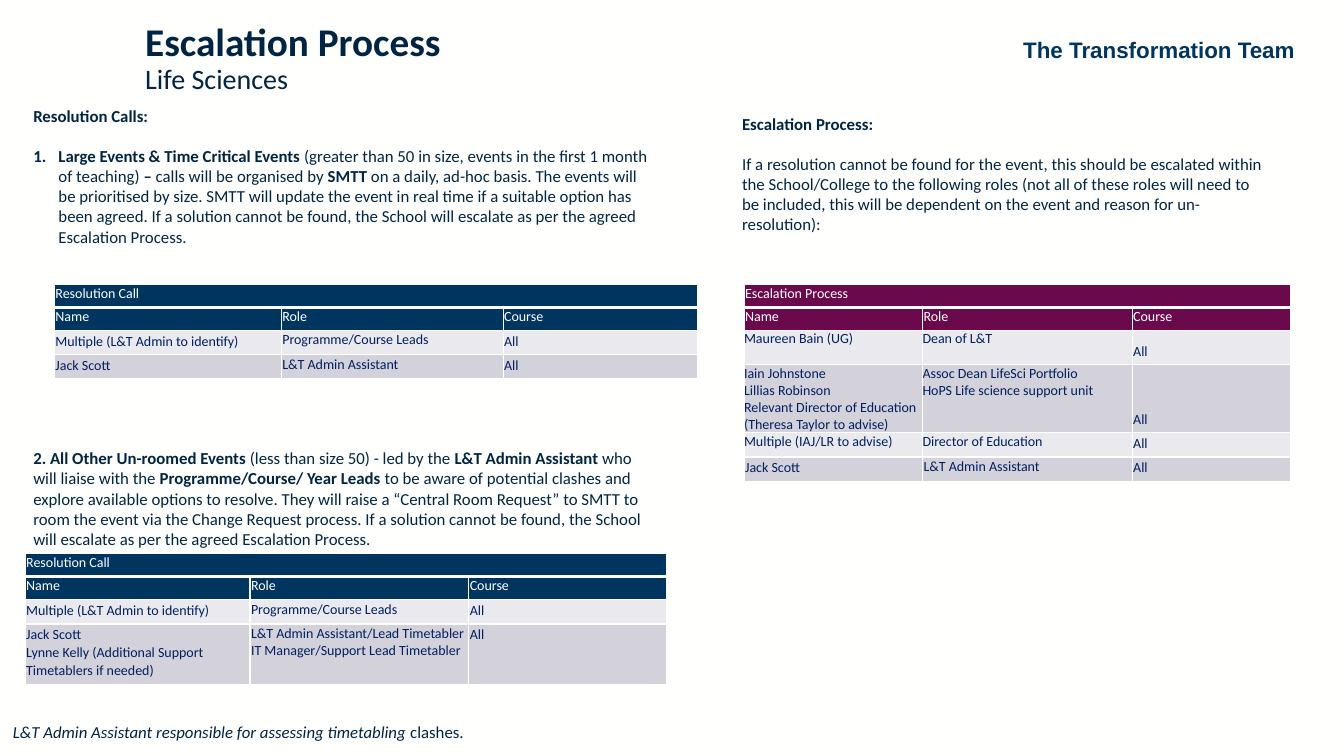
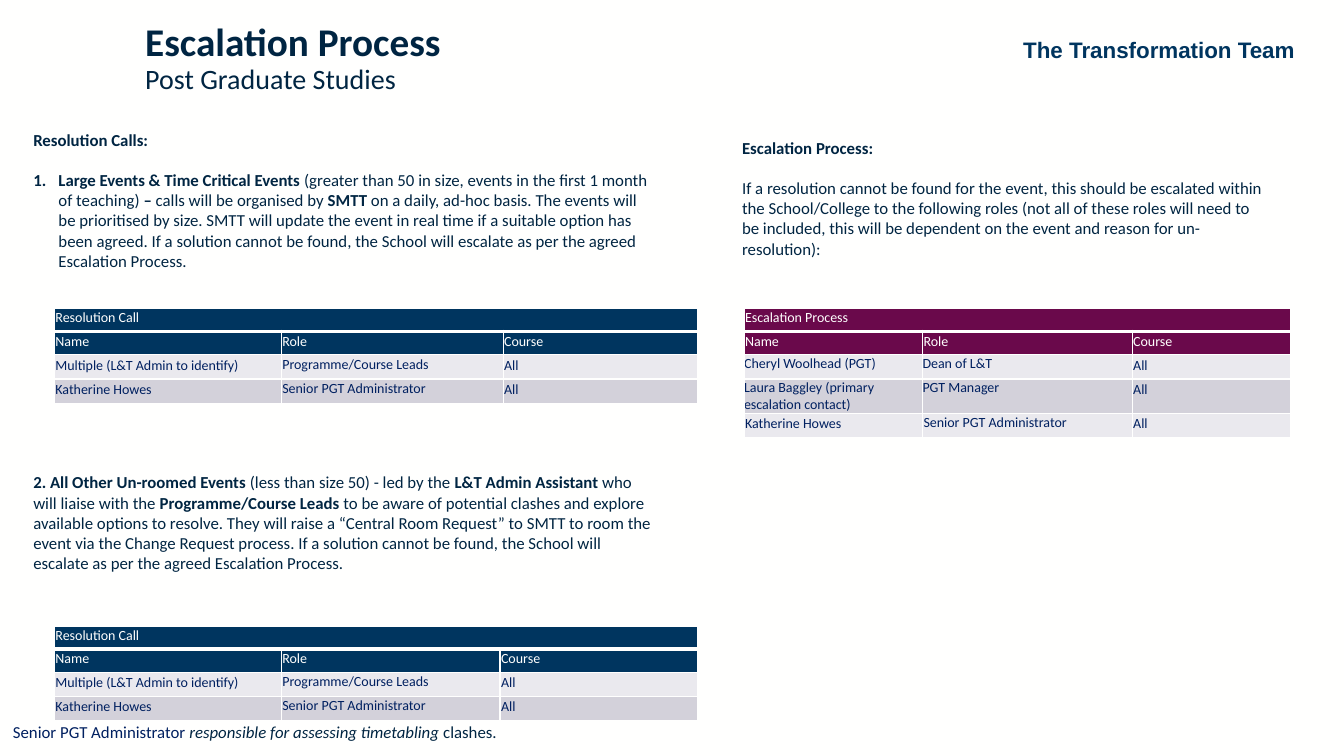
"""Builds two escalation process slides with their contact tables."""
from lxml import etree
from pptx import Presentation
from pptx.dml.color import RGBColor
from pptx.enum.text import MSO_ANCHOR, MSO_AUTO_SIZE, PP_ALIGN
from pptx.oxml.ns import qn
from pptx.text.text import Font
from pptx.util import Inches, Pt

TOP, BOTTOM = MSO_ANCHOR.TOP, MSO_ANCHOR.BOTTOM
CENTER = PP_ALIGN.CENTER
NO_AUTOFIT = MSO_AUTO_SIZE.NONE

PAPER = RGBColor(0xFF, 0xFF, 0xFE)
INK = RGBColor(0x00, 0x25, 0x42)
NAVY = RGBColor(0x00, 0x20, 0x60)
BLUE = RGBColor(0x00, 0x35, 0x5F)
PLUM = RGBColor(0x6A, 0x09, 0x4B)
BANDS = (RGBColor(0xEA, 0xE9, 0xEE), RGBColor(0xD3, 0xD1, 0xDA))

TEAM = "The Transformation Team"
TITLE = "Escalation Process"
COLUMNS = ("Name", "Role", "Course")
HEADER_HEIGHT = 0.23
UPPER_COLS = (2.25, 2.2, 1.93)
ESCALATION_COLS = (1.77, 2.08, 1.57)
LEADS = ("Multiple (L&T Admin to identify)", "Programme/Course Leads", "All")
PGT_ADMIN = ("Katherine Howes", "Senior PGT Administrator", "All")
LT_ADMIN = ("Jack Scott", "L&T Admin Assistant", "All")

LARGE_EVENTS = [
    ("Large Events & Time Critical Events ", "b"),
    ("(greater than 50 in size, events in the first 1 month of teaching) ", ""),
    ("– ", "b"),
    ("calls will be organised by ", ""),
    ("SMTT ", "b"),
    ("on a daily, ad-hoc basis. The events will be prioritised by size. SMTT will "
     "update the event in real time if a suitable option has been agreed. If a solution "
     "cannot be found, the School will escalate as per the agreed Escalation Process.", ""),
]
ESCALATION_TEXT = (
    "If a resolution cannot be found for the event, this should be escalated within the "
    "School/College to the following roles (not all of these roles will need to be "
    "included, this will be dependent on the event and reason for un-resolution):")

SLIDES = [
    {
        "school": "Life Sciences",
        "shift": 0,
        "leads": "Programme/Course/ Year Leads ",
        "upper": [(0.24, LEADS), (0.24, LT_ADMIN)],
        "lower_at": (0.25, 5.49),
        "lower_cols": (2.23, 2.17, 1.96),
        "lower": [
            (0.24, LEADS),
            (0.6, ("Jack Scott\nLynne Kelly (Additional Support Timetablers if needed)",
                   "L&T Admin Assistant/Lead Timetabler\nIT Manager/Support Lead Timetabler",
                   "All")),
        ],
        "escalation": [
            (0.34, ("Maureen Bain (UG)", "Dean of L&T", "All")),
            (0.67, ("Iain Johnstone\nLillias Robinson\n"
                    "Relevant Director of Education (Theresa Taylor to advise)",
                    "Assoc Dean LifeSci Portfolio\nHoPS Life science support unit", "All")),
            (0.24, ("Multiple (IAJ/LR to advise)", "Director of Education", "All")),
            (0.24, LT_ADMIN),
        ],
        "tight_rows": 3,
        "low_courses": 2,
        "footer": [("L&T Admin Assistant responsible for assessing timetabling ", "i"),
                   ("clashes.", "")],
    },
    {
        "school": "Post Graduate Studies",
        "shift": 0.24,
        "leads": "Programme/Course Leads ",
        "upper": [(0.24, LEADS), (0.24, PGT_ADMIN)],
        "lower_at": (0.54, 6.21),
        "lower_cols": (2.25, 2.17, 1.96),
        "lower": [(0.24, LEADS), (0.24, PGT_ADMIN)],
        "escalation": [
            (0.24, ("Cheryl Woolhead (PGT)", "Dean of L&T", "All")),
            (0.34, ("Laura Baggley (primary escalation contact)", "PGT Manager", "All")),
            (0.24, PGT_ADMIN),
        ],
        "tight_rows": 2,
        "low_courses": 0,
        "footer": [("Senior PGT Administrator ", "n"),
                   ("responsible for assessing timetabling ", "i"),
                   ("clashes.", "")],
    },
]


def other_events(leads):
    return [
        ("2. All Other Un-roomed Events ", "b"),
        ("(less than size 50) - led by the ", ""),
        ("L&T Admin Assistant ", "b"),
        ("who will liaise with the ", ""),
        (leads, "b"),
        ("to be aware of potential clashes and explore available options to resolve. They "
         "will raise a “Central Room Request” to SMTT to room the event via the Change "
         "Request process. If a solution cannot be found, the School will escalate as per "
         "the agreed Escalation Process.", ""),
    ]


def set_font(font, size, color, bold=False, name="Calibri"):
    font.name, font.size, font.bold = name, Pt(size), bold
    font.color.rgb = color


def add_run(paragraph, text, size, color, bold=False, name="Calibri"):
    run = paragraph.add_run()
    run.text = text
    set_font(run.font, size, color, bold, name)
    return run


def add_styled_runs(paragraph, runs):
    for text, style in runs:
        run = add_run(paragraph, text, 12, NAVY if style == "n" else INK, style == "b")
        run.font.italic = style == "i"


def place(shape, left, top, width, height):
    shape.left, shape.top = Inches(left), Inches(top)
    shape.width, shape.height = Inches(width), Inches(height)


def fill_body(body, paragraphs):
    """Writes (runs, space before, numbered) paragraphs into a body placeholder."""
    frame = body.text_frame
    frame.auto_size = NO_AUTOFIT
    for index, (runs, space, numbered) in enumerate(paragraphs):
        paragraph = frame.add_paragraph() if index else frame.paragraphs[0]
        properties = paragraph._p.get_or_add_pPr()
        indent = Inches(0.25) if numbered else 0
        properties.set("marL", str(indent))
        properties.set("indent", str(-indent))
        if numbered:
            etree.SubElement(properties, qn("a:buFont"), typeface="+mj-lt")
            etree.SubElement(properties, qn("a:buAutoNum"), type="arabicPeriod")
        else:
            etree.SubElement(properties, qn("a:buNone"))
        paragraph.space_before = Pt(space)
        add_styled_runs(paragraph, runs)


def set_borders(cell, row):
    widths = {"L": 1, "R": 1, "T": 3 if row == 1 else 1, "B": 3 if row == 0 else 1}
    properties = cell._tc.get_or_add_tcPr()
    for index, (side, width) in enumerate(widths.items()):
        line = etree.Element(qn(f"a:ln{side}"), w=str(Pt(width)))
        fill = etree.SubElement(line, qn("a:solidFill"))
        etree.SubElement(fill, qn("a:srgbClr"), val=str(PAPER))
        properties.insert(index, line)


def add_contacts(slide, heading, color, at, cols, people, tight_rows=0, low_courses=0):
    rows = [(HEADER_HEIGHT, (heading, "", "")), (HEADER_HEIGHT, COLUMNS)] + people
    height = sum(row_height for row_height, _ in rows)
    table = slide.shapes.add_table(len(rows), len(cols), Inches(at[0]), Inches(at[1]),
                                   Inches(sum(cols)), Inches(height)).table
    table.first_row = table.horz_banding = False
    for column, width in zip(table.columns, cols):
        column.width = Inches(width)
    table.cell(0, 0).merge(table.cell(0, len(cols) - 1))
    for row, (row_height, texts) in enumerate(rows):
        table.rows[row].height = Inches(row_height)
        person = row - 2
        for col, text in enumerate(texts):
            cell = table.cell(row, col)
            course = col == 2
            tight = 0 <= person < tight_rows and not course
            low = person < 0 or (course and person < low_courses)
            cell.vertical_anchor = BOTTOM if low else TOP
            cell.margin_left = cell.margin_right = cell.margin_top = Inches(0 if tight else 0.01)
            cell.margin_bottom = Inches(0 if tight else 0.05)
            cell.fill.solid()
            cell.fill.fore_color.rgb = color if person < 0 else BANDS[person % 2]
            set_borders(cell, row)
            for index, line in enumerate(text.split("\n")):
                frame = cell.text_frame
                paragraph = frame.add_paragraph() if index else frame.paragraphs[0]
                if person >= 0 and not tight and col != 1:
                    paragraph.line_spacing = 1.07
                if line:
                    add_run(paragraph, line, 10, PAPER if person < 0 else NAVY)
                else:
                    set_font(paragraph.font, 10, PAPER)


def add_label(slide, left, top, width, height):
    label = slide.shapes.add_textbox(Inches(left), Inches(top), Inches(width), Inches(height))
    label.text_frame.word_wrap = True
    return label


def style_template(prs, layout):
    master = prs.slide_master
    master.background.fill.solid()
    master.background.fill.fore_color.rgb = PAPER
    title_level = master.element.find(f".//{qn('p:titleStyle')}/{qn('a:lvl1pPr')}")
    title_level.set("algn", "l")
    set_font(Font(title_level.find(qn("a:defRPr"))), 28, INK, True)
    place(layout.placeholders[0], 1.34, 0, 4.23, 1.17)


def add_team_to_layout(slide, layout):
    team = add_label(slide, 9.95, 0.31, 3.09, 0.37)
    paragraph = team.text_frame.paragraphs[0]
    paragraph.alignment = CENTER
    add_run(paragraph, TEAM, 16, BLUE, True, "Arial")
    layout.shapes.element.append(team.element)


def fill_slide(slide, content):
    shift = content["shift"]
    title, calls, escalation = slide.placeholders
    title.text_frame.auto_size = NO_AUTOFIT
    paragraph = title.text_frame.paragraphs[0]
    paragraph.line_spacing = 0.9
    add_run(paragraph, TITLE, 28, INK, True)
    paragraph.add_line_break()
    add_run(paragraph, content["school"], 20, INK)

    place(calls, 0.23, 1 + shift, 6.37, 4.54)
    fill_body(calls, [([("Resolution Calls:", "b")], 0, False),
                      (LARGE_EVENTS, 14, True),
                      (other_events(content["leads"]), 144, False)])
    place(escalation, 7.26, 1.08 + shift, 5.42, 1.51)
    fill_body(escalation, [([("Escalation Process:", "b")], 0, False),
                           ([(ESCALATION_TEXT, "")], 14, False)])

    add_contacts(slide, "Resolution Call", BLUE, (0.54, 2.82 + shift),
                 UPPER_COLS, content["upper"])
    add_contacts(slide, "Resolution Call", BLUE, content["lower_at"],
                 content["lower_cols"], content["lower"])
    add_contacts(slide, "Escalation Process", PLUM, (7.38, 2.82 + shift), ESCALATION_COLS,
                 content["escalation"], content["tight_rows"], content["low_courses"])

    footer = add_label(slide, 0.03, 7.11, 7.38, 0.3)
    add_styled_runs(footer.text_frame.paragraphs[0], content["footer"])


def main():
    prs = Presentation()
    prs.slide_width, prs.slide_height = Inches(13.33), Inches(7.5)
    layout = prs.slide_layouts[3]
    style_template(prs, layout)
    for index, content in enumerate(SLIDES):
        slide = prs.slides.add_slide(layout)
        if index == 0:
            add_team_to_layout(slide, layout)
        fill_slide(slide, content)
    prs.save("out.pptx")


if __name__ == "__main__":
    main()
